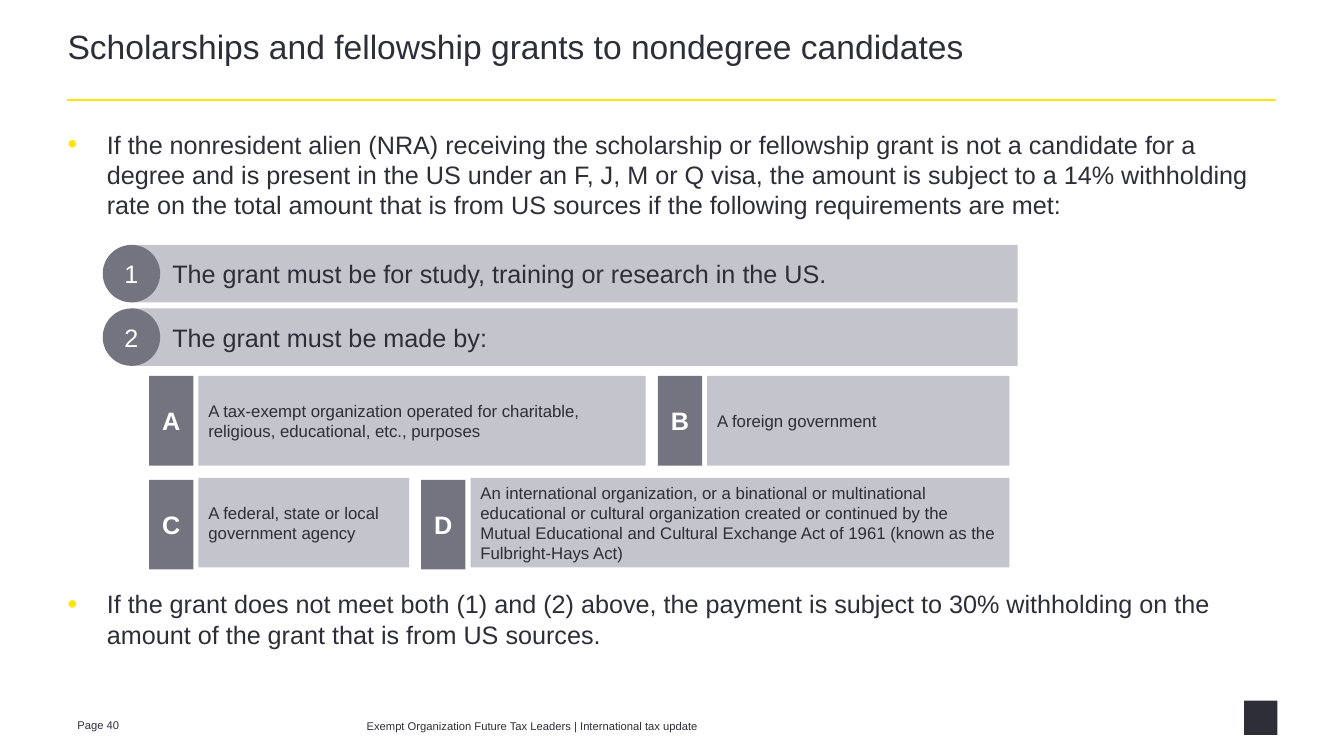
from pptx import Presentation
from pptx.util import Inches, Pt
from pptx.dml.color import RGBColor
from pptx.enum.shapes import MSO_SHAPE as Kind, MSO_CONNECTOR as Link
from pptx.enum.text import PP_ALIGN as Align, MSO_ANCHOR as Anchor, MSO_AUTO_SIZE as Fit
from pptx.oxml.ns import qn
from lxml.etree import SubElement

TITLE = "Scholarships and fellowship grants to nondegree candidates"
POINTS = [
    (1.24, 1.35, "If the nonresident alien (NRA) receiving the scholarship or fellowship grant is not a candidate for a degree and is present in the US under an F, J, M or Q visa, the amount is subject to a 14% withholding rate on the total amount that is from US sources if the following requirements are met:"),
    (5.8, 0.71, "If the grant does not meet both (1) and (2) above, the payment is subject to 30% withholding on the amount of the grant that is from US sources."),
]
RULES = [
    "The grant must be for study, training or research in the US.",
    "The grant must be made by:",
]
MAKERS = [
    (3.73, 3.73, 4.44, [
        ("A", "A tax-exempt organization operated for charitable, religious, educational, etc., purposes"),
        ("B", "A foreign government"),
    ]),
    (4.76, 4.74, 2.09, [
        ("C", "A federal, state or local government agency"),
        ("D", "An international organization, or a binational or multinational educational or cultural organization created or continued by the Mutual Educational and Cultural Exchange Act of 1961 (known as the Fulbright-Hays Act)"),
    ]),
]
FOOTS = [
    (0, 7.08, 0.73, 0.2, "Page 40"),
    (2.87, 7.09, 6.67, 0.24, "Exempt Organization Future Tax Leaders | International tax update"),
]

INK = RGBColor(0x2E, 0x2E, 0x38)
GOLD = RGBColor(0xFF, 0xE6, 0x00)
LIGHT = RGBColor(0xC4, 0xC4, 0xCD)
DARK = RGBColor(0x74, 0x74, 0x80)
WHITE = RGBColor(0xFF, 0xFF, 0xFF)

MARGIN, FULL = 0.67, 12.01
TOP, STEP, BAR = 2.43, 0.63, 0.57
START, END = 0.81, 9.35
TAG, SEAM, GAP, TALL = 0.44, 0.05, 0.12, 0.89

deck = Presentation()
deck.slide_width, deck.slide_height = Inches(13.34), Inches(7.5)
slide = deck.slides.add_slide(deck.slide_layouts[5])
shapes = slide.shapes


def place(col, row, wide, tall):
    return [Inches(n) for n in (MARGIN + col, row, wide, tall)]


def write(shape, text, size, color=INK, bold=False, align=Align.LEFT,
          anchor=Anchor.TOP, pads=(0.1, 0.05, 0.1, 0.05)):
    frame = shape.text_frame
    frame.word_wrap = True
    frame.auto_size = Fit.NONE
    frame.vertical_anchor = anchor
    frame.margin_left, frame.margin_top, frame.margin_right, frame.margin_bottom = map(Inches, pads)
    para = frame.paragraphs[0]
    para.alignment = align
    run = para.add_run()
    run.text = text
    font = run.font
    font.name, font.size, font.bold = "Arial", Pt(size), bold
    font.color.rgb = color
    return para


def block(kind, spot, fill):
    shape = shapes.add_shape(kind, *place(*spot))
    shape.shadow.inherit = False
    shape.fill.solid()
    shape.fill.fore_color.rgb = fill
    shape.line.fill.background()
    return shape


def bullet(para):
    props = para._p.get_or_add_pPr()
    props.set("marL", str(Inches(0.39)))
    props.set("indent", str(-Inches(0.39)))
    tint = SubElement(props, qn("a:buClr"))
    SubElement(tint, qn("a:srgbClr"), val=str(GOLD))
    SubElement(props, qn("a:buSzPct"), val="110000")
    SubElement(props, qn("a:buFont"), typeface="Arial")
    SubElement(props, qn("a:buChar"), char="•")


title = shapes.title
title.left, title.top, title.width, title.height = place(0, 0.32, FULL, 0.65)
write(title, TITLE, 24, pads=(0, 0, 0, 0)).line_spacing = 0.85

x, y, wide, _ = place(0, 0.99, 12, 0)
rule = shapes.add_connector(Link.STRAIGHT, x, y, x + wide, y)
rule.line.color.rgb = GOLD
rule.line.width = Pt(1.5)
SubElement(rule._element.spPr, qn("a:effectLst"))

for row, tall, text in POINTS:
    box = shapes.add_textbox(*place(0, row, FULL, tall))
    bullet(write(box, text, 18, pads=(0, 0.04, 0, 0)))

for i, text in enumerate(RULES):
    row = TOP + i * STEP
    bar = block(Kind.RECTANGLE, (0.64, row, 8.79, BAR), LIGHT)
    write(bar, text, 18, anchor=Anchor.MIDDLE, pads=(0.4, 0.05, 0.1, 0.05))
    disc = block(Kind.OVAL, (0.35, row, BAR, BAR), DARK)
    write(disc, str(i + 1), 18, WHITE, align=Align.CENTER, anchor=Anchor.MIDDLE)

for high, low, first, pair in MAKERS:
    col = START
    for i, (mark, text) in enumerate(pair):
        tag = block(Kind.RECTANGLE, (col, high, TAG, TALL), DARK)
        write(tag, mark, 18, WHITE, True, Align.CENTER, Anchor.MIDDLE)
        col += TAG + SEAM
        wide = END - col if i else first
        cell = block(Kind.RECTANGLE, (col, low, wide, TALL), LIGHT)
        write(cell, text, 12, anchor=Anchor.MIDDLE)
        col += wide + GAP

for *spot, text in FOOTS:
    write(shapes.add_textbox(*place(*spot)), text, 8)

block(Kind.RECTANGLE, (11.68, 6.95, 0.33, 0.34), INK)

deck.save("out.pptx")
